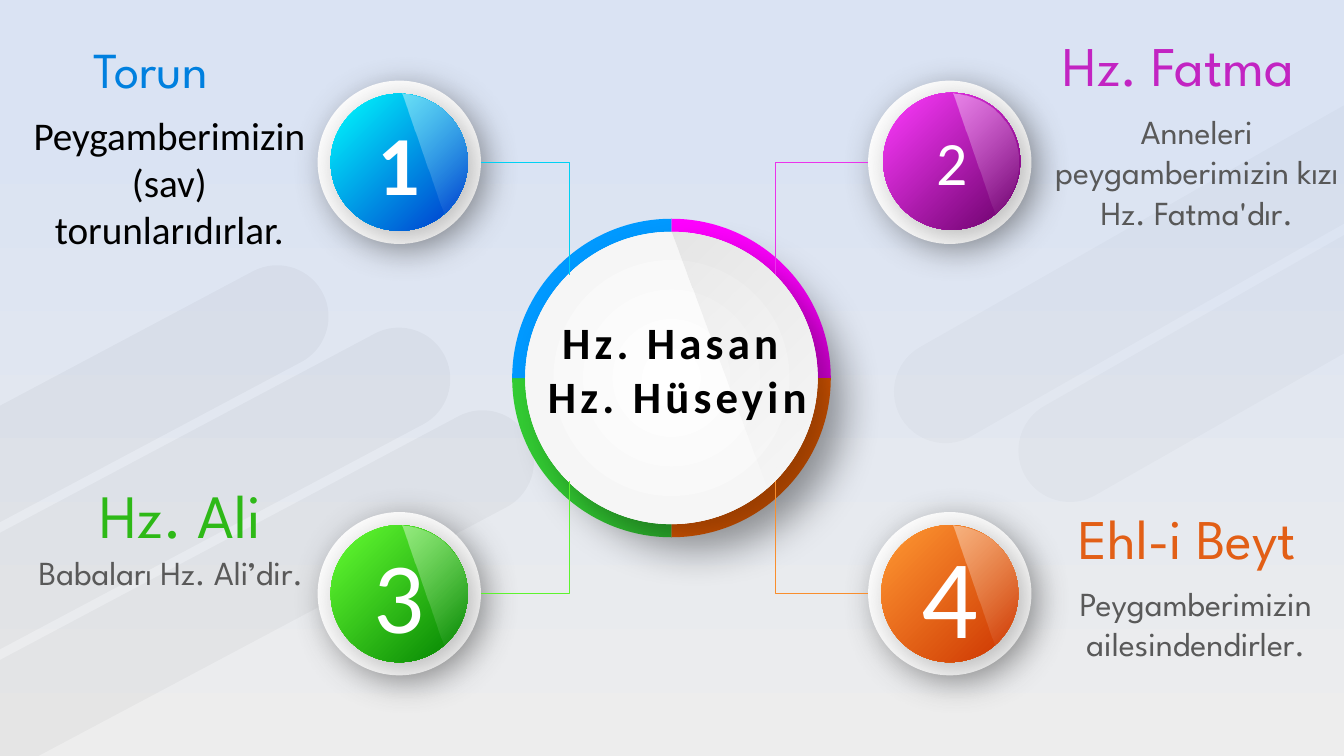
import math

import pptx
import pptx.dml.color
import pptx.enum.shapes
import pptx.enum.text
import pptx.oxml
import pptx.oxml.ns
import pptx.util

Inches = pptx.util.Inches
Pt = pptx.util.Pt
SHAPE = pptx.enum.shapes.MSO_SHAPE
ALIGN = pptx.enum.text.PP_ALIGN
qn = pptx.oxml.ns.qn
NS = 'xmlns:a="http://schemas.openxmlformats.org/drawingml/2006/main"'

COLORS = {
    "black": "000000", "white": "FFFFFF", "pearl": "F2F2F2",
    "body": "595959", "badge_shadow": "404040",
    "bg_bottom": "EDEDED", "bg_top": "DAE3F3",
    "hub_magenta": "FF00FF", "hub_orange": "FF6600",
    "hub_green": "33CC33", "hub_blue": "0099FF",
    "blue_light": "00FFFF", "blue_dark": "0033CC", "blue_line": "00D1F4", "blue_title": "0080DF",
    "magenta_light": "FF3BFF", "magenta_dark": "660066",
    "magenta_line": "EB33EB", "magenta_title": "C224C2",
    "green_light": "66FF33", "green_dark": "008000", "green_line": "5DF42E", "green_title": "2EB917",
    "orange_light": "FF9933", "orange_dark": "CC3300",
    "orange_line": "F98E2D", "orange_title": "E25F16",
}
HUB_X, HUB_Y = 6.66, 3.75
HUB_RADIUS, HUB_FACE_RADIUS = 1.58, 1.45
BADGE_RADIUS, BADGE_FACE_RADIUS = 0.81, 0.68
LINKS_X, JOINT_OFFSET = 6.67, 1.02

# number, number size, bold, face shift right and down, hue, centre x, centre y
BADGES = [
    ("1", 60, True, 0, 0, "blue", 3.96, 1.61),
    ("3", 72, False, 0, 0, "green", 3.96, 5.89),
    ("2", 44, False, 0.02, -0.01, "magenta", 9.42, 1.61),
    ("4", 80, False, 0, 0, "orange", 9.42, 5.89),
]
# left, top, width, height, words, size, font, colour, alignment
CAPTIONS = [
    (0.83, 0.33, 1.77, 0.71, "Torun", 36, "League Spartan", "blue_title", ALIGN.LEFT),
    (0.23, 1.05, 2.9, 1.51, "Peygamberimizin (sav) torunlarıdırlar.", 28, "Calibri", "black", ALIGN.CENTER),
    (0.04, 4.68, 3.5, 0.84, "Hz. Ali", 44, "League Spartan", "green_title", ALIGN.CENTER),
    (0.25, 5.43, 2.89, 0.91, "Babaları Hz. Ali’dir.", 24, "League Spartan", "body", ALIGN.CENTER),
    (10.44, 0.25, 4.21, 0.77, "Hz. Fatma", 40, "League Spartan", "magenta_title", ALIGN.LEFT),
    (10.31, 1.05, 3.12, 1.31, "Anneleri peygamberimizin kızı Hz. Fatma'dır.", 24,
     "League Spartan", "body", ALIGN.CENTER),
    (10.4, 4.95, 2.75, 0.77, "Ehl-i Beyt", 40, "League Spartan", "orange_title", ALIGN.CENTER),
    (10.18, 5.73, 3.36, 0.91, "Peygamberimizin ailesindendirler.", 24,
     "League Spartan", "body", ALIGN.CENTER),
]
# left, top, width, rotation, opacity
LEFT_STRIPES = [(-2.93, 3.92, 6.51, 332, 3), (-2.09, 4.63, 6.9, 332, 3), (-1.26, 5.45, 6.9, 332, 3)]
RIGHT_STRIPES = [(9.74, 2.6, 6.51, 150.3, 2), (8.48, 1.92, 6.9, 150.3, 2)]


def rgb(name):
    return pptx.dml.color.RGBColor.from_string(COLORS[name])


def set_opacity(shape, percents):
    """Give the fill's colours, in order, their opacity in percent."""
    for color, percent in zip(shape._element.spPr.iter(qn("a:srgbClr")), percents):
        color.append(pptx.oxml.parse_xml(f'<a:alpha {NS} val="{percent * 1000}"/>'))


def fill_shape(shape, *names):
    """Fill with one colour, or with a diagonal gradient of two."""
    shape.shadow.inherit = False
    shape.line.fill.background()
    if len(names) == 1:
        shape.fill.solid()
        shape.fill.fore_color.rgb = rgb(names[0])
    else:
        shape.fill.gradient()
        shape.fill.gradient_angle = 315
        for stop, name in zip(shape.fill.gradient_stops, names):
            stop.color.rgb = rgb(name)


def make_radial(shape):
    linear = shape._element.spPr.find(qn("a:gradFill")).find(qn("a:lin"))
    linear.getparent().replace(linear, pptx.oxml.parse_xml(
        f'<a:path {NS} path="circle"><a:fillToRect l="50000" t="50000" r="50000" b="50000"/></a:path>'))


def cast_shadow(shape, name, blur, distance):
    shape._element.spPr.find(qn("a:effectLst")).append(pptx.oxml.parse_xml(
        f'<a:outerShdw {NS} blurRad="{Pt(blur)}" dist="{Pt(distance)}" dir="2700000" algn="tl" '
        f'rotWithShape="0"><a:srgbClr val="{COLORS[name]}"><a:alpha val="40000"/></a:srgbClr></a:outerShdw>'))


def add_circle(slide, x, y, radius, *names):
    circle = slide.shapes.add_shape(SHAPE.OVAL, Inches(x - radius), Inches(y - radius),
                                    Inches(2 * radius), Inches(2 * radius))
    fill_shape(circle, *names)
    return circle


def arc_controls(x, y, radius, start, end):
    """Return the two handles and the end of a cubic arc."""
    a, b = math.radians(start), math.radians(end)
    reach = 4 / 3 * math.tan((b - a) / 4)
    return [(x + radius * (math.cos(t) + k * math.sin(t)), y + radius * (math.sin(t) - k * math.cos(t)))
            for t, k in ((a, -reach), (b, reach), (b, 0))]


def add_arc_piece(slide, x, y, radius, angles, names, corner=()):
    """Outline an arc through clockwise degrees, closed by a chord or through corner."""
    first = math.radians(angles[0])
    points = [p for start, end in zip(angles, angles[1:])
              for p in arc_controls(x, y, radius, start, end)]
    outline = slide.shapes.build_freeform(Inches(x + radius * math.cos(first)),
                                          Inches(y + radius * math.sin(first)), scale=1.0)
    outline.add_line_segments([(Inches(px), Inches(py)) for px, py in points + list(corner)], close=True)
    piece = outline.convert_to_shape()
    sides = list(piece._element.spPr.iter(qn("a:lnTo")))
    for i in range(0, len(points), 3):
        curve = pptx.oxml.parse_xml(f"<a:cubicBezTo {NS}/>")
        sides[i].addprevious(curve)
        for side in sides[i:i + 3]:
            curve.append(side[0])
            side.getparent().remove(side)
    fill_shape(piece, *names)
    return piece


def add_gloss(slide, x, y, radius, start, name, opacity):
    gloss = add_arc_piece(slide, x, y, radius, (start, 0, 49), (name, name))
    set_opacity(gloss, (opacity, 0))


def write(frame, words, size, font, color, align, bold=False):
    frame.word_wrap = True
    frame.text = words
    for paragraph in frame.paragraphs:
        paragraph.alignment = align
        for run in paragraph.runs:
            run.font.size = Pt(size)
            run.font.name = font
            run.font.bold = bold
            run.font.color.rgb = rgb(color)


def add_caption(slide, left, top, width, height, *text):
    caption = slide.shapes.add_textbox(Inches(left), Inches(top), Inches(width), Inches(height))
    write(caption.text_frame, *text)
    caption.text_frame.auto_size = pptx.enum.text.MSO_AUTO_SIZE.SHAPE_TO_FIT_TEXT
    return caption


def add_stripe(slide, left, top, width, rotation, opacity):
    stripe = slide.shapes.add_shape(SHAPE.ROUNDED_RECTANGLE, Inches(left), Inches(top),
                                    Inches(width), Inches(1.02))
    stripe.adjustments[0] = 0.5
    stripe.rotation = rotation
    fill_shape(stripe, "black")
    set_opacity(stripe, (opacity,))


def add_hub(slide):
    for i, name in enumerate(("hub_magenta", "hub_orange", "hub_green", "hub_blue")):
        start = 90 * i - 90
        add_arc_piece(slide, HUB_X, HUB_Y, HUB_RADIUS, (start, start + 90), (name,), [(HUB_X, HUB_Y)])
    face = add_circle(slide, HUB_X, HUB_Y, HUB_FACE_RADIUS, "white", "pearl")
    make_radial(face)
    cast_shadow(face, "black", 30, 25)
    names = add_caption(slide, 5.09, 3.07, 3.26, 1.18, "Hz. Hasan \nHz. Hüseyin", 32,
                        "Calibri", "black", ALIGN.CENTER, True)
    for paragraph in names.text_frame.paragraphs:
        for run in paragraph.runs:
            run._r.get_or_add_rPr().set("spc", "300")
    add_gloss(slide, HUB_X, HUB_Y, HUB_FACE_RADIUS, -90, "black", 7)


def add_badge(slide, number, size, bold, shift_x, shift_y, hue, x, y):
    rim = add_circle(slide, x, y, BADGE_RADIUS, "white")
    face = add_circle(slide, x + shift_x, y + shift_y, BADGE_FACE_RADIUS, f"{hue}_light", f"{hue}_dark")
    for disc in (rim, face):
        cast_shadow(disc, "badge_shadow", 25, 7)
    write(face.text_frame, number, size, "Calibri", "white", ALIGN.CENTER, bold)
    face.text_frame.vertical_anchor = pptx.enum.text.MSO_ANCHOR.MIDDLE
    add_gloss(slide, x, y, BADGE_FACE_RADIUS, -87, "white", 42)


def add_link(slide, hue, x, y):
    """Run an elbow from a badge, level first, to the hub."""
    side = 1 if x > HUB_X else -1
    level = 1 if y > HUB_Y else -1
    link = slide.shapes.add_connector(
        pptx.enum.shapes.MSO_CONNECTOR.ELBOW, Inches(x - side * BADGE_RADIUS), Inches(y),
        Inches(LINKS_X + side * JOINT_OFFSET), Inches(HUB_Y + level * JOINT_OFFSET))
    link.line.color.rgb = rgb(f"{hue}_line")
    link.line.width = Pt(0.5)
    properties = link._element.spPr
    properties.find(qn("a:prstGeom")).set("prst", "bentConnector2")
    properties.append(pptx.oxml.parse_xml(f"<a:effectLst {NS}/>"))


def paint_background(slide):
    fill = slide.background.fill
    fill.gradient()
    fill.gradient_angle = 90
    for stop, name, position in zip(fill.gradient_stops, ("bg_bottom", "bg_top"), (0, 0.84)):
        stop.color.rgb = rgb(name)
        stop.position = position


def main():
    deck = pptx.Presentation()
    deck.slide_width, deck.slide_height = Inches(13.33), Inches(7.5)
    slide = deck.slides.add_slide(deck.slide_layouts[6])
    paint_background(slide)
    for draw, rows in ((add_stripe, LEFT_STRIPES), (add_hub, [()]), (add_badge, BADGES),
                       (add_link, [badge[5:] for badge in BADGES]),
                       (add_caption, CAPTIONS), (add_stripe, RIGHT_STRIPES)):
        for row in rows:
            draw(slide, *row)
    deck.save("out.pptx")


if __name__ == "__main__":
    main()
